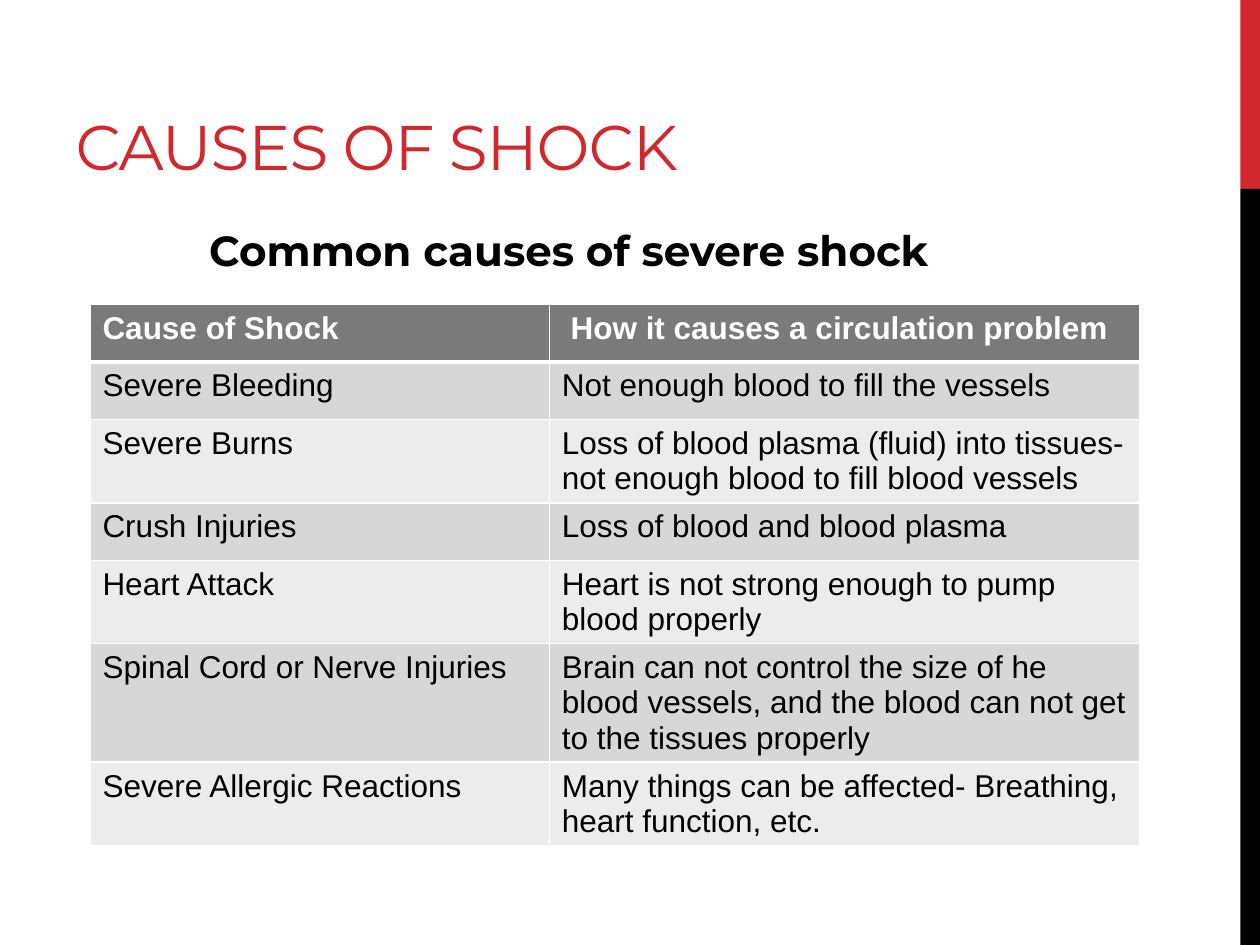
from lxml import etree
from pptx import Presentation
from pptx.dml.color import RGBColor
from pptx.enum.shapes import MSO_SHAPE
from pptx.enum.text import MSO_ANCHOR, MSO_AUTO_SIZE, PP_ALIGN
from pptx.oxml.ns import qn
from pptx.util import Pt

RECTANGLE = MSO_SHAPE.RECTANGLE
BOTTOM, TOP = MSO_ANCHOR.BOTTOM, MSO_ANCHOR.TOP
NO_AUTOFIT, GROW = MSO_AUTO_SIZE.NONE, MSO_AUTO_SIZE.SHAPE_TO_FIT_TEXT
LEFT = PP_ALIGN.LEFT
TITLE_ONLY_LAYOUT = 5

RED, BLACK, WHITE = "D1282E", "000000", "FFFFFF"
HEADER_FILL, BAND_FILLS = "7A7A7A", ("D7D7D7", "ECECEC")
HEADING_FONT, TABLE_FONT = "Montserrat", "Arial"

CAUSES = [
    ("Cause of Shock", " How it causes a circulation problem"),
    ("Severe Bleeding", "Not enough blood to fill the vessels"),
    ("Severe Burns", "Loss of blood plasma (fluid) into tissues- not enough blood to fill blood vessels"),
    ("Crush Injuries", "Loss of blood and blood plasma"),
    ("Heart Attack", "Heart is not strong enough to pump blood properly"),
    ("Spinal Cord or Nerve Injuries",
     "Brain can not control the size of he blood vessels, and the blood can not get to the tissues properly"),
    ("Severe Allergic Reactions", "Many things can be affected- Breathing, heart function, etc."),
]


def color(hex_string):
    return RGBColor.from_string(hex_string)


def write_text(frame, text, font=TABLE_FONT, size=18, fill=BLACK, bold=False, spacing=None):
    paragraph = frame.paragraphs[0]
    paragraph.alignment = LEFT
    run = paragraph.add_run()
    run.text = text
    run.font.name = font
    run.font.size = Pt(size)
    run.font.bold = bold
    run.font.color.rgb = color(fill)
    if spacing is not None:
        run.font._element.set("spc", str(round(spacing * 100)))


def set_borders(cell, top, bottom, side=1, line_color=WHITE):
    """Draw solid cell borders, with widths in points."""
    properties = cell._tc.get_or_add_tcPr()
    widths = {"a:lnL": side, "a:lnR": side, "a:lnT": top, "a:lnB": bottom}
    for position, (tag, width) in enumerate(widths.items()):
        line = etree.Element(qn(tag), w=str(Pt(width)))
        fill = etree.SubElement(line, qn("a:solidFill"))
        etree.SubElement(fill, qn("a:srgbClr"), val=line_color)
        properties.insert(position, line)


class SlideBuilder:
    """Holds the current slide and its heading style."""

    def __init__(self, slide, heading_font):
        self.slide = slide
        self.heading_font = heading_font

    def bar(self, left, top, width, height, fill):
        shape = self.slide.shapes.add_shape(RECTANGLE, Pt(left), Pt(top), Pt(width), Pt(height))
        shape.shadow.inherit = False
        shape.fill.solid()
        shape.fill.fore_color.rgb = color(fill)
        shape.line.fill.background()

    def title(self, text, left, top, width, height):
        title = self.slide.shapes.title
        title.left, title.top, title.width, title.height = map(Pt, (left, top, width, height))
        frame = title.text_frame
        frame.auto_size = NO_AUTOFIT
        frame.vertical_anchor = BOTTOM
        write_text(frame, text, font=self.heading_font, size=36, fill=RED, spacing=-0.6)

    def subtitle(self, text, left, top, width, height):
        box = self.slide.shapes.add_textbox(Pt(left), Pt(top), Pt(width), Pt(height))
        frame = box.text_frame
        frame.word_wrap = False
        frame.auto_size = GROW
        write_text(frame, text, font=self.heading_font, size=24, bold=True)

    def table(self, rows, left, top, column_widths, row_height):
        table = self.slide.shapes.add_table(
            len(rows), len(column_widths), Pt(left), Pt(top),
            Pt(sum(column_widths)), Pt(row_height * len(rows))).table
        for column, width in zip(table.columns, column_widths):
            column.width = Pt(width)
        for row_index, texts in enumerate(rows):
            table.rows[row_index].height = Pt(row_height)
            is_header = row_index == 0
            for column_index, text in enumerate(texts):
                cell = table.cell(row_index, column_index)
                cell.vertical_anchor = TOP
                cell.fill.solid()
                cell.fill.fore_color.rgb = color(
                    HEADER_FILL if is_header else BAND_FILLS[(row_index - 1) % 2])
                set_borders(cell, top=3 if row_index == 1 else 1, bottom=3 if is_header else 1)
                write_text(cell.text_frame, text, fill=WHITE if is_header else BLACK, bold=is_header)


def main():
    presentation = Presentation()
    presentation.slide_width, presentation.slide_height = Pt(720), Pt(540)
    slide = presentation.slides.add_slide(presentation.slide_layouts[TITLE_ONLY_LAYOUT])
    builder = SlideBuilder(slide, HEADING_FONT)
    builder.bar(708.75, 0, 11.25, 108, RED)
    builder.bar(708.75, 108, 11.25, 432, BLACK)
    builder.title("CAUSES OF SHOCK", 36, 0, 456, 108)
    builder.table(CAUSES, 51.4, 173.8, column_widths=(262.5, 337.5), row_height=33)
    builder.subtitle("Common causes of severe shock", 112.5, 124.5, 451.5, 36)
    presentation.save("out.pptx")


if __name__ == "__main__":
    main()
